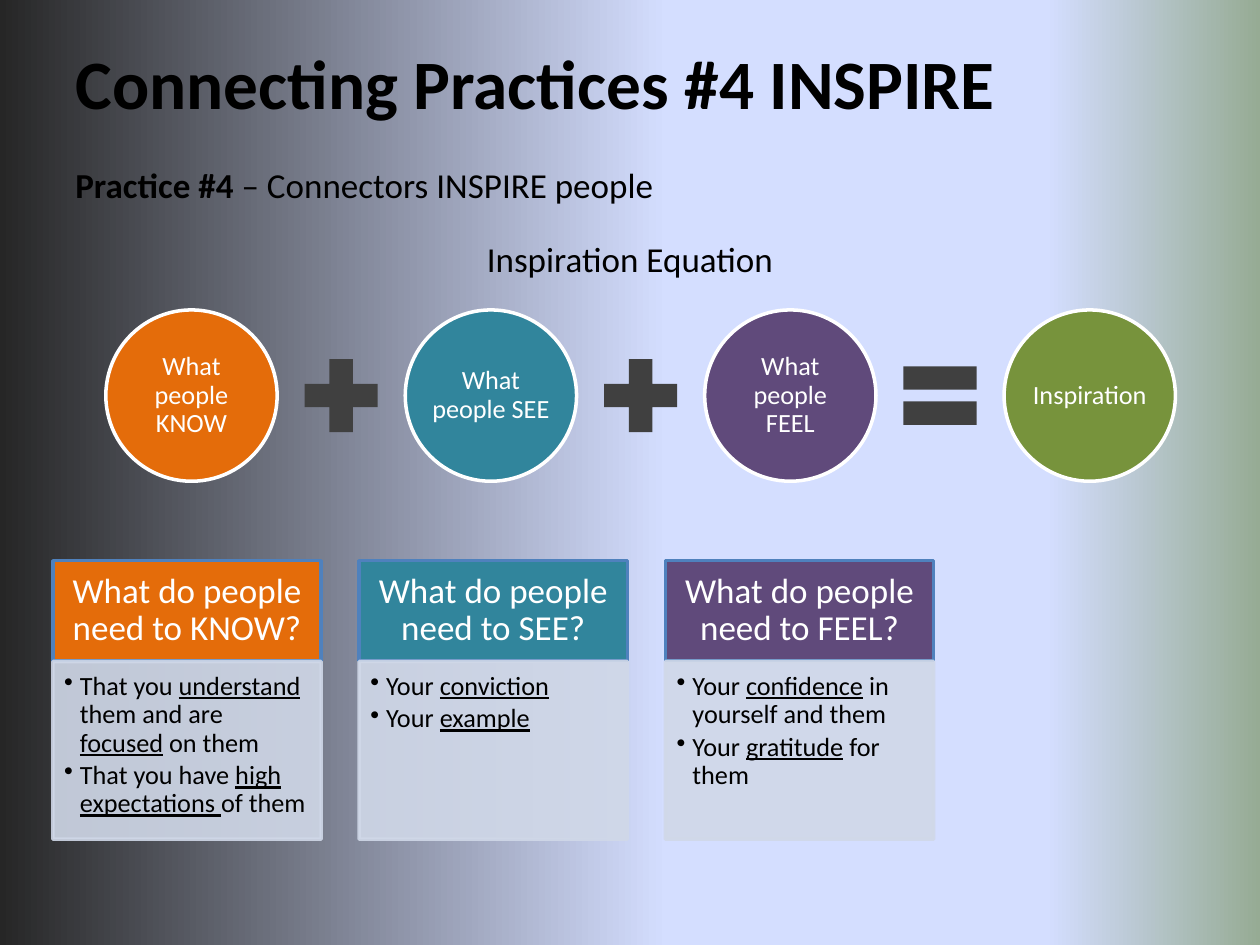
from lxml.etree import SubElement as Sub
from pptx import Presentation
from pptx.dml.color import RGBColor as Rgb
from pptx.enum.shapes import MSO_SHAPE as Kind
from pptx.enum.text import MSO_ANCHOR as Anchor, MSO_AUTO_SIZE as Fit, PP_ALIGN as Align
from pptx.oxml.ns import qn
from pptx.util import Pt

HEX = {
    "know": "E46C0A", "see": "31859C", "feel": "604A7B", "goal": "77933C",
    "sign": "404040", "edge": "4F81BD", "panel": "D0D8E8",
    "white": "FFFFFF", "black": "000000",
}
FONT = "Calibri"

# Text between underscores is stressed: bold in the intro, underlined in the cards.
TITLE = "_Connecting Practices #4 INSPIRE_"
INTRO = "_Practice #4_ – Connectors INSPIRE people"
HEAD = "Inspiration Equation"
TERMS = [  # text, colour, sign that follows
    ("What people KNOW", "know", Kind.MATH_PLUS),
    ("What people SEE", "see", Kind.MATH_PLUS),
    ("What people FEEL", "feel", Kind.MATH_EQUAL),
    ("Inspiration", "goal", None),
]
CARDS = [  # heading, colour, bullets
    ("What do people need to KNOW?", "know",
     ["That you _understand_ them and are _focused_ on them",
      "That you have _high expectations _of them"]),
    ("What do people need to SEE?", "see",
     ["Your _conviction_", "Your _example_"]),
    ("What do people need to FEEL?", "feel",
     ["Your _confidence_ in yourself and them", "Your _gratitude_ for them"]),
]
STOPS = [(0, "262626"), (53, "D4DEFF"), (83, "D4DEFF"), (100, "96AB94")]

BALL = dict(left=60.5, top=177.1, size=97.9, step=171.1)
SIGN = 56.8
CARD = dict(left=30.2, top=320.4, wide=153.4, step=175, head=57, body=101.5)
PANEL_TOP = 378


def write(frame, lines, size, color="black", align=Align.LEFT, anchor=Anchor.TOP,
          pad=(7.2, 3.6, 7.2, 3.6), mark="underline", gap=None, after=0, bullet=False):
    """Fill a text frame; pad is left, top, right, bottom in points."""
    frame.word_wrap, frame.auto_size = True, Fit.NONE
    frame.vertical_anchor = anchor
    (frame.margin_left, frame.margin_top,
     frame.margin_right, frame.margin_bottom) = map(Pt, pad)
    for i, line in enumerate(lines):
        para = frame.add_paragraph() if i else frame.paragraphs[0]
        para.alignment = align
        para.space_before, para.space_after = Pt(0), Pt(after)
        if gap:
            para.line_spacing = gap
        if bullet:
            prop = para._p.get_or_add_pPr()
            prop.set("marL", str(Pt(9)))
            prop.set("indent", str(-Pt(9)))
            Sub(prop, qn("a:buChar"), char="•")
        for j, part in enumerate(line.split("_")):
            if part:
                run = para.add_run()
                run.text = part
                font = run.font
                font.name, font.size = FONT, Pt(size)
                font.color.rgb = Rgb.from_string(HEX[color])
                setattr(font, mark, j % 2 == 1)


def draw(slide, kind, box, fill, line=None, alpha=None):
    """Add a preset shape; alpha is the opacity in percent."""
    shape = slide.shapes.add_shape(kind, *map(Pt, box))
    shape.shadow.inherit = False
    shape.fill.solid()
    shape.fill.fore_color.rgb = Rgb.from_string(HEX[fill])
    if line:
        shape.line.color.rgb = Rgb.from_string(HEX[line])
        shape.line.width = Pt(2)
    else:
        shape.line.fill.background()
    if alpha:
        for tone in shape._element.spPr.iter(qn("a:srgbClr")):
            Sub(tone, qn("a:alpha"), val=str(alpha * 1000))
    return shape


def shade(slide):
    fill = slide.background.fill
    fill.gradient()
    fill.gradient_angle = 0
    stops = next(slide.element.iter(qn("a:gsLst")))
    for old in list(stops):
        stops.remove(old)
    for place, tone in STOPS:
        stop = Sub(stops, qn("a:gs"), pos=str(place * 1000))
        Sub(stop, qn("a:srgbClr"), val=tone)


def add_text(slide):
    title = slide.shapes.title
    title.left, title.top, title.width, title.height = map(Pt, (36, 21.6, 648, 50.4))
    write(title.text_frame, [TITLE], 39.6, anchor=Anchor.MIDDLE, mark="bold")
    intro = slide.shapes.add_textbox(*map(Pt, (36, 90, 648, 84))).text_frame
    write(intro, [INTRO, HEAD], 20, mark="bold")
    first, last = intro.paragraphs
    first.space_before, last.space_before = Pt(4), Pt(18)
    last.alignment = Align.CENTER


def add_sum(slide):
    size, top = BALL["size"], BALL["top"]
    space = (BALL["step"] - size - SIGN) / 2
    for i, (text, color, sign) in enumerate(TERMS):
        left = BALL["left"] + i * BALL["step"]
        ball = draw(slide, Kind.OVAL, (left, top, size, size), color, "white")
        write(ball.text_frame, [text], 15, "white", Align.CENTER, Anchor.MIDDLE,
              pad=(1, 1, 1, 1), gap=0.9)
        if sign:
            box = (left + size + space, top + (size - SIGN) / 2, SIGN, SIGN)
            draw(slide, sign, box, "sign")


def add_cards(slide):
    wide = CARD["wide"]
    for i, (head, color, points) in enumerate(CARDS):
        left = CARD["left"] + i * CARD["step"]
        top = draw(slide, Kind.RECTANGLE, (left, CARD["top"], wide, CARD["head"]),
                   color, "edge")
        write(top.text_frame, [head], 20, "white", Align.CENTER, Anchor.MIDDLE,
              pad=(10, 6.5, 10, 6.5), gap=0.9)
        panel = draw(slide, Kind.RECTANGLE, (left, PANEL_TOP, wide, CARD["body"]),
                     "panel", "panel", alpha=90)
        write(panel.text_frame, points, 15, pad=(6.5, 6.5, 8, 9.5), gap=0.9,
              after=2.25, bullet=True)


def main():
    deck = Presentation()
    deck.slide_width, deck.slide_height = Pt(720), Pt(540)
    slide = deck.slides.add_slide(deck.slide_layouts[5])
    shade(slide)
    add_text(slide)
    add_sum(slide)
    add_cards(slide)
    deck.save("out.pptx")


if __name__ == "__main__":
    main()
